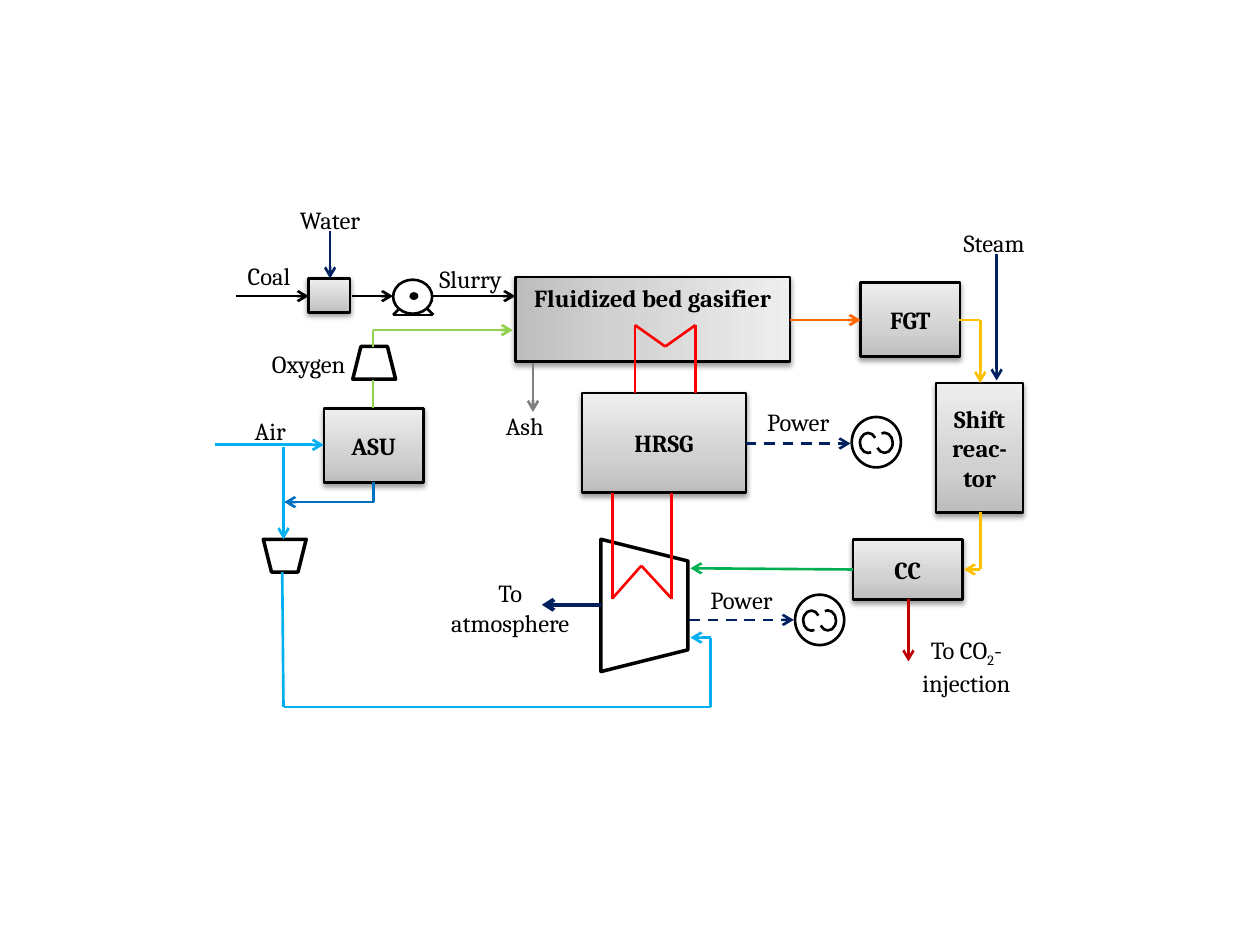
from dataclasses import dataclass
from itertools import pairwise

from lxml import etree
from pptx import Presentation
from pptx.dml.color import RGBColor
from pptx.enum.dml import MSO_LINE_DASH_STYLE as Dash
from pptx.enum.shapes import MSO_CONNECTOR as Link
from pptx.enum.shapes import MSO_SHAPE as Preset
from pptx.enum.text import MSO_ANCHOR as Anchor
from pptx.enum.text import MSO_AUTO_SIZE as AutoSize
from pptx.enum.text import PP_ALIGN as Align
from pptx.oxml import parse_xml
from pptx.oxml.ns import nsdecls, qn
from pptx.util import Inches, Pt

COLORS = {
    "black": "000000", "white": "FFFFFF", "gray": "808080", "navy": "002060",
    "air": "00B0F0", "nitrogen": "0070C0", "oxygen": "92D050", "raw gas": "FF6600",
    "syngas": "FFC000", "hydrogen": "00B050", "heat": "FF0000", "carbon": "C00000",
    "dark": "BDBDBD", "middle": "D1D1D1", "light": "EEEEEE",
}
FONT = "Cambria"


@dataclass
class Unit:
    text: str
    left: float
    top: float
    width: float
    height: float
    angle: int = 270
    anchor: Anchor = Anchor.MIDDLE


@dataclass
class Symbol:
    preset: Preset
    left: float
    top: float
    width: float
    height: float
    line_width: float = 1.5
    rotation: int = 0
    fill: str | None = "white"
    adjustments: tuple[float, ...] = ()


@dataclass
class Flow:
    color: str
    points: list[tuple[float, float]]
    arrow: bool = True
    width: float = 1.5
    dashed: bool = False


@dataclass
class Label:
    text: str  # parts between bars are subscripts
    left: float
    top: float
    width: float
    height: float = 0.34


def rgb(name: str) -> RGBColor:
    return RGBColor.from_string(COLORS[name])


def write_text(frame, text: str, *, bold: bool = False, anchor=Anchor.TOP) -> None:
    frame.word_wrap = True
    frame.vertical_anchor = anchor
    paragraph = frame.paragraphs[0]
    paragraph.alignment = Align.CENTER
    for index, part in enumerate(text.split("|")):
        run = paragraph.add_run()
        run.text = part
        run.font.name, run.font.size, run.font.bold = FONT, Pt(14), bold
        run.font.color.rgb = rgb("black")
        if index % 2:
            run.font._element.set("baseline", "-25000")


def draw_unit(slide, unit: Unit) -> None:
    shape = slide.shapes.add_shape(
        Preset.RECTANGLE, *map(Inches, (unit.left, unit.top, unit.width, unit.height)))
    shape.line.color.rgb = rgb("black")
    shape.line.width = Pt(1.5)
    stops = "".join(
        f'<a:gs pos="{position}000"><a:srgbClr val="{COLORS[name]}"/></a:gs>'
        for position, name in ((0, "dark"), (35, "middle"), (100, "light")))
    properties = shape._element.spPr
    properties.find(qn("a:prstGeom")).addnext(parse_xml(
        f'<a:gradFill {nsdecls("a")} rotWithShape="1"><a:gsLst>{stops}</a:gsLst>'
        f'<a:lin ang="{unit.angle * 60000}" scaled="0"/></a:gradFill>'))
    properties.append(parse_xml(
        f'<a:effectLst {nsdecls("a")}><a:outerShdw blurRad="{Pt(3.1)}" dist="{Pt(1.6)}" '
        f'dir="5400000" rotWithShape="0"><a:srgbClr val="{COLORS["black"]}">'
        '<a:alpha val="38000"/></a:srgbClr></a:outerShdw></a:effectLst>'))
    if unit.text:
        write_text(shape.text_frame, unit.text, bold=True, anchor=unit.anchor)


def draw_symbol(slide, symbol: Symbol) -> None:
    shape = slide.shapes.add_shape(
        symbol.preset, *map(Inches, (symbol.left, symbol.top, symbol.width, symbol.height)))
    shape.shadow.inherit = False
    shape.rotation = symbol.rotation
    for index, value in enumerate(symbol.adjustments):
        shape.adjustments[index] = value
    if symbol.fill:
        shape.fill.solid()
        shape.fill.fore_color.rgb = rgb(symbol.fill)
    else:
        shape.fill.background()
    shape.line.color.rgb = rgb("black")
    shape.line.width = Pt(symbol.line_width)


def draw_generator(slide, left: float, top: float) -> None:
    draw_symbol(slide, Symbol(Preset.OVAL, left, top, 0.39, 0.4))
    for offset, rotation in ((0.05, 270), (0.18, 90)):
        # Arc angles of 162 and 54.72 degrees
        draw_symbol(slide, Symbol(Preset.ARC, left + offset, top + 0.14, 0.16, 0.13,
                                  rotation=rotation, fill=None, adjustments=(97.2, 32.83)))


def add_link(slide, kind: Link, start, end, flow: Flow, arrow: bool):
    connector = slide.shapes.add_connector(kind, *map(Inches, (*start, *end)))
    connector.line.color.rgb = rgb(flow.color)
    connector.line.width = Pt(flow.width)
    if flow.dashed:
        connector.line.dash_style = Dash.DASH
    if arrow:
        etree.SubElement(connector.line._get_or_add_ln(), qn("a:tailEnd"), type="arrow")
    etree.SubElement(connector._element.spPr, qn("a:effectLst"))
    return connector


def draw_flow(slide, flow: Flow) -> None:
    for start, end in pairwise(flow.points):
        add_link(slide, Link.STRAIGHT, start, end, flow, flow.arrow and end == flow.points[-1])


def draw_nitrogen_return(slide) -> None:
    connector = add_link(slide, Link.ELBOW, (2.53, 3.55), (2.69, 4.26),
                         Flow("nitrogen", []), True)
    properties = connector._element.spPr
    properties.find(qn("a:xfrm")).set("rot", "5400000")
    properties.find(qn("a:prstGeom")).set("prst", "bentConnector2")


def draw_label(slide, label: Label) -> None:
    box = slide.shapes.add_textbox(
        *map(Inches, (label.left, label.top, label.width, label.height)))
    write_text(box.text_frame, label.text)
    box.text_frame.auto_size = AutoSize.SHAPE_TO_FIT_TEXT


UNITS = [
    Unit("Fluidized bed gasifier", 4.09, 2.2, 2.18, 0.67, angle=0, anchor=Anchor.TOP),
    Unit("FGT", 6.83, 2.24, 0.79, 0.59),
    Unit("HRSG", 4.62, 3.12, 1.3, 0.79),
    Unit("ASU", 2.57, 3.24, 0.79, 0.59),
    Unit("", 2.45, 2.21, 0.33, 0.27),
    Unit("Shift reac-tor", 7.43, 3.04, 0.69, 1.03),
    Unit("CC", 6.77, 4.28, 0.87, 0.48),
]
SYMBOLS = [
    Symbol(Preset.TRAPEZOID, 2.8, 2.75, 0.34, 0.26, 2),  # oxygen compressor
    Symbol(Preset.TRAPEZOID, 2.09, 4.28, 0.34, 0.26, 2, 180),  # air compressor
    Symbol(Preset.TRAPEZOID, 4.59, 4.46, 1.05, 0.69, 2, 90),  # gas turbine
    Symbol(Preset.OVAL, 3.12, 2.22, 0.31, 0.27),  # slurry pump
    Symbol(Preset.FLOWCHART_CONNECTOR, 3.26, 2.33, 0.05, 0.04, fill="black"),
]
FLOWS = [
    # Coal, water and slurry
    Flow("black", [(1.87, 2.35), (2.45, 2.35)]),
    Flow("navy", [(2.62, 1.83), (2.62, 2.21)]),
    Flow("black", [(2.79, 2.35), (3.12, 2.35)]),
    Flow("black", [(3.17, 2.45), (3.12, 2.5), (3.44, 2.5), (3.39, 2.45)], arrow=False),
    Flow("black", [(3.44, 2.35), (4.09, 2.35)]),
    Flow("gray", [(4.23, 2.88), (4.23, 3.27)]),
    # Air and oxygen
    Flow("air", [(1.71, 3.53), (2.57, 3.53)]),
    Flow("air", [(2.25, 3.55), (2.25, 4.28)]),
    Flow("air", [(2.24, 4.54), (2.25, 5.61), (5.64, 5.61), (5.64, 5.06), (5.48, 5.06)]),
    Flow("oxygen", [(2.96, 3.24), (2.96, 3.02)], arrow=False),
    Flow("oxygen", [(2.96, 2.75), (2.96, 2.62), (4.07, 2.62)]),
    # Gas treatment
    Flow("raw gas", [(6.27, 2.54), (6.83, 2.54)]),
    Flow("syngas", [(7.61, 2.54), (7.78, 2.54), (7.78, 3.04)]),
    Flow("navy", [(7.91, 2.02), (7.91, 3.02)]),
    Flow("syngas", [(7.78, 4.06), (7.78, 4.52), (7.65, 4.52)]),
    Flow("carbon", [(7.21, 4.75), (7.21, 5.25)]),
    Flow("hydrogen", [(6.77, 4.52), (5.48, 4.51)]),
    # Heat exchange, power and exhaust
    Flow("heat", [(5.04, 3.12), (5.04, 2.58), (5.28, 2.75), (5.52, 2.58), (5.52, 3.12)],
         arrow=False),
    Flow("heat", [(4.86, 3.91), (4.86, 4.75), (5.09, 4.49), (5.33, 4.75), (5.33, 3.91)],
         arrow=False),
    Flow("navy", [(5.92, 3.52), (6.75, 3.52)], dashed=True),
    Flow("navy", [(5.47, 4.92), (6.3, 4.92)], dashed=True),
    Flow("navy", [(4.77, 4.8), (4.3, 4.8)], width=2.25),
]
LABELS = [
    Label("Coal", 1.8, 2.02, 0.67), Label("Air", 1.81, 3.25, 0.67),
    Label("Water", 2.21, 1.58, 0.82), Label("Oxygen", 2.04, 2.72, 0.82),
    Label("Ash", 3.83, 3.21, 0.67), Label("Slurry", 3.37, 2.05, 0.73),
    Label("Power", 5.96, 3.18, 0.75), Label("Power", 5.51, 4.59, 0.75),
    Label("Steam", 7.48, 1.76, 0.82), Label("To atmosphere", 3.42, 4.54, 1.26, 0.57),
    Label("To CO|2|-injection", 7.13, 4.99, 1.08, 0.57),
]


def main() -> None:
    presentation = Presentation()
    presentation.slide_width, presentation.slide_height = Inches(10), Inches(7.5)
    slide = presentation.slides.add_slide(presentation.slide_layouts[6])
    for draw, items in ((draw_unit, UNITS), (draw_symbol, SYMBOLS),
                        (draw_flow, FLOWS), (draw_label, LABELS)):
        for item in items:
            draw(slide, item)
    draw_nitrogen_return(slide)
    for left, top in ((6.76, 3.31), (6.31, 4.72)):
        draw_generator(slide, left, top)
    presentation.save("out.pptx")


if __name__ == "__main__":
    main()
